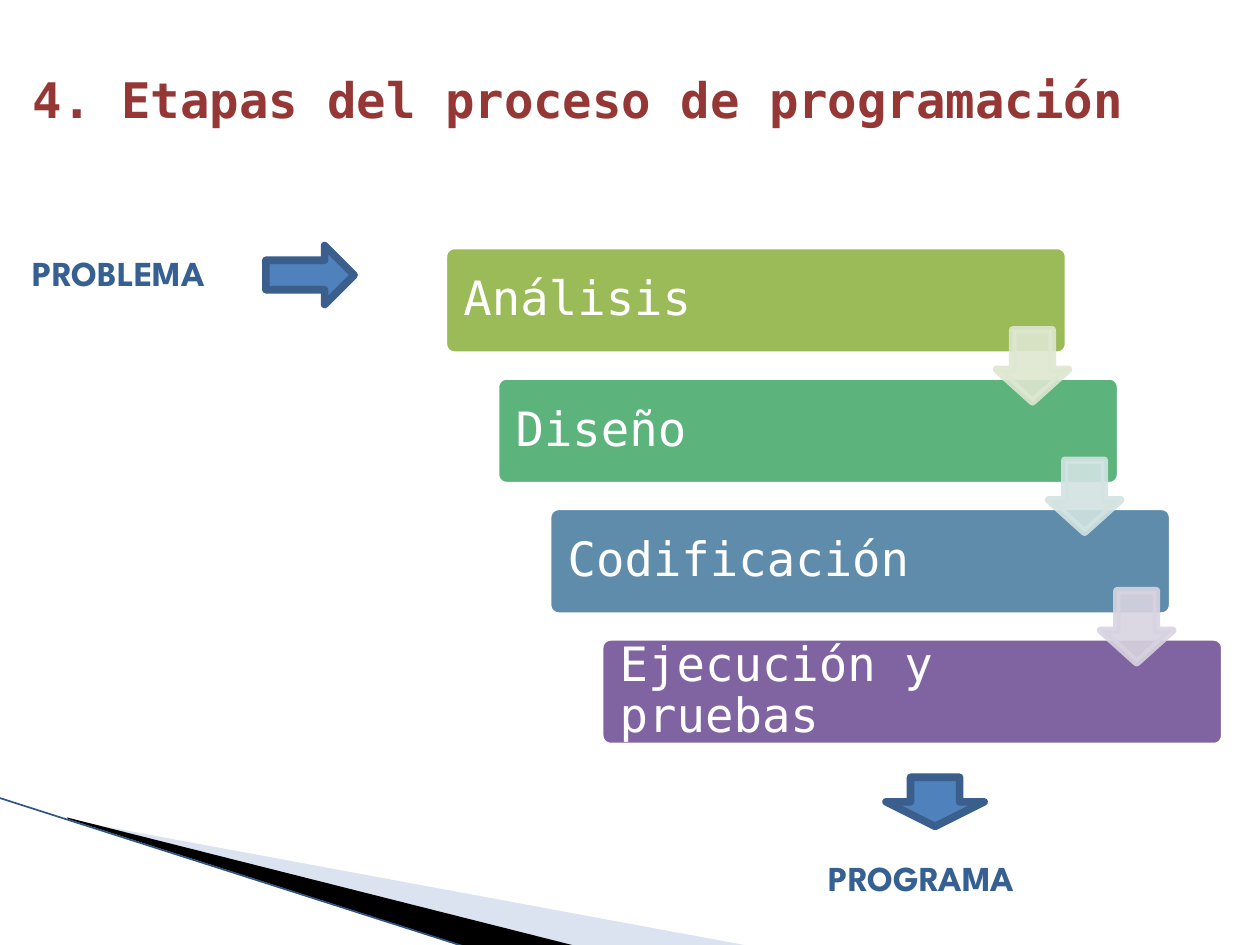
from lxml.etree import SubElement
from pptx import Presentation
from pptx.dml.color import RGBColor
from pptx.enum.shapes import MSO_CONNECTOR as Connector, MSO_SHAPE as Shape
from pptx.enum.text import MSO_ANCHOR as Anchor, PP_ALIGN as Align
from pptx.oxml.ns import qn
from pptx.util import Cm, Pt

MONO = "DejaVu Sans Mono"
LABEL_FONT = {"name": "League Spartan", "size": Pt(20), "bold": True}
TITLE_FONT = {"name": MONO, "size": Pt(28), "bold": True}
STEP_FONT = {"name": MONO, "size": Pt(27), "bold": False}
OUTLINE = Pt(4.33)
STEPS = [
    ("Análisis", "9BBB59"),
    ("Diseño", "5CB37C"),
    ("Codificación", "608CAB"),
    ("Ejecución y pruebas", "8064A2"),
]
LINK_COLORS = ["DEE7D1", "D2E3E2", "D8D3E0"]
STEP_X, STEP_Y = 1.05, 2.63


def color(value):
    return RGBColor.from_string(value)


def apply(target, values):
    for name, value in values.items():
        setattr(target, name, value)


def set_opacity(properties, percent):
    for element in properties.iter(qn("a:srgbClr")):
        SubElement(element, qn("a:alpha"), val=str(percent * 1000))


class SlideBuilder:
    """Draws styled elements on the current slide."""

    def __init__(self, slide):
        self.slide = slide
        self.shapes = slide.shapes

    def set_text(self, shape, text, font, hex_color, frame_format=None, paragraph_format=None):
        frame = shape.text_frame
        frame.text = text
        apply(frame, {"word_wrap": True, **(frame_format or {})})
        paragraph = frame.paragraphs[0]
        apply(paragraph, {"alignment": Align.LEFT, **(paragraph_format or {})})
        run_font = paragraph.runs[0].font
        apply(run_font, font)
        run_font.color.rgb = color(hex_color)

    def title(self, text, left, top, width, height):
        shape = self.shapes.title
        apply(shape, {"left": Cm(left), "top": Cm(top), "width": Cm(width), "height": Cm(height)})
        self.set_text(shape, text, TITLE_FONT, "953735", {"vertical_anchor": Anchor.MIDDLE})

    def label(self, text, left, top, width, height=1.12):
        box = self.shapes.add_textbox(Cm(left), Cm(top), Cm(width), Cm(height))
        self.set_text(box, text, LABEL_FONT, "376092")

    def paint(self, shape, fill):
        shape.shadow.inherit = False
        shape.fill.solid()
        shape.fill.fore_color.rgb = color(fill)

    def block(self, kind, left, top, width, height, fill, line, adjustments=(), opacity=100):
        shape = self.shapes.add_shape(kind, Cm(left), Cm(top), Cm(width), Cm(height))
        for index, value in enumerate(adjustments):
            shape.adjustments[index] = value
        self.paint(shape, fill)
        shape.line.color.rgb = color(line)
        shape.line.width = OUTLINE
        if opacity < 100:
            set_opacity(shape._element.spPr, opacity)
        return shape

    def step(self, text, left, top, fill):
        shape = self.block(Shape.ROUNDED_RECTANGLE, left, top, 12.6, 2.21, fill, "FFFFFF", [0.1])
        frame_format = {
            "vertical_anchor": Anchor.MIDDLE,
            "margin_left": Cm(0.34),
            "margin_right": Cm(2.86),
            "margin_top": Cm(0.34),
            "margin_bottom": Cm(0.34),
        }
        self.set_text(shape, text, STEP_FONT, "FFFFFF", frame_format, {"line_spacing": 0.9})

    def wedge(self, points, fill, opacity=100):
        corners = [(Cm(x), Cm(y)) for x, y in points]
        outline = self.shapes.build_freeform(*corners[0])
        outline.add_line_segments(corners[1:], close=True)
        shape = outline.convert_to_shape()
        self.paint(shape, fill)
        shape.line.fill.background()
        if opacity < 100:
            set_opacity(shape._element.spPr, opacity)

    def edge(self, start, end, hex_color):
        points = [Cm(value) for value in (*start, *end)]
        connector = self.shapes.add_connector(Connector.STRAIGHT, *points)
        connector.line.color.rgb = color(hex_color)
        connector.line.width = Pt(0.95)
        SubElement(connector._element.spPr, qn("a:effectLst"))


def main():
    presentation = Presentation()
    presentation.slide_width, presentation.slide_height = Cm(25.4), Cm(19.05)
    layout = presentation.slide_layouts.get_by_name("Title Only")
    builder = SlideBuilder(presentation.slides.add_slide(layout))

    builder.wedge([(1.4, 16.53), (15.11, 19.07), (11.58, 19.07), (1.4, 16.51)], "A7B9DB", 40)
    builder.wedge([(1.35, 16.48), (11.61, 19.07), (9.45, 19.1), (1.37, 16.51)], "000000")
    builder.edge((-0.03, 16.08), (9.42, 19.1), "2F5587")
    builder.title("4. Etapas del proceso de programación", 0.41, 0.41, 24.54, 3.18)

    for index, (text, fill) in enumerate(STEPS):
        builder.step(text, 8.94 + index * STEP_X, 4.95 + index * STEP_Y, fill)
    for index, fill in enumerate(LINK_COLORS):
        left, top = 20.09 + index * STEP_X, 6.65 + index * STEP_Y
        builder.block(Shape.DOWN_ARROW, left, top, 1.45, 1.45, fill, fill, [0.55, 0.45], 90)

    builder.label("PROBLEMA", 0.41, 4.95, 10.52)
    builder.block(Shape.RIGHT_ARROW, 5.36, 4.95, 1.78, 1.19, "4F81BD", "3A5F8C")
    builder.block(Shape.DOWN_ARROW, 17.86, 15.67, 1.98, 0.99, "4F81BD", "3A5F8C")
    builder.label("PROGRAMA", 16.46, 17.15, 4.95)
    presentation.save("out.pptx")


if __name__ == "__main__":
    main()
